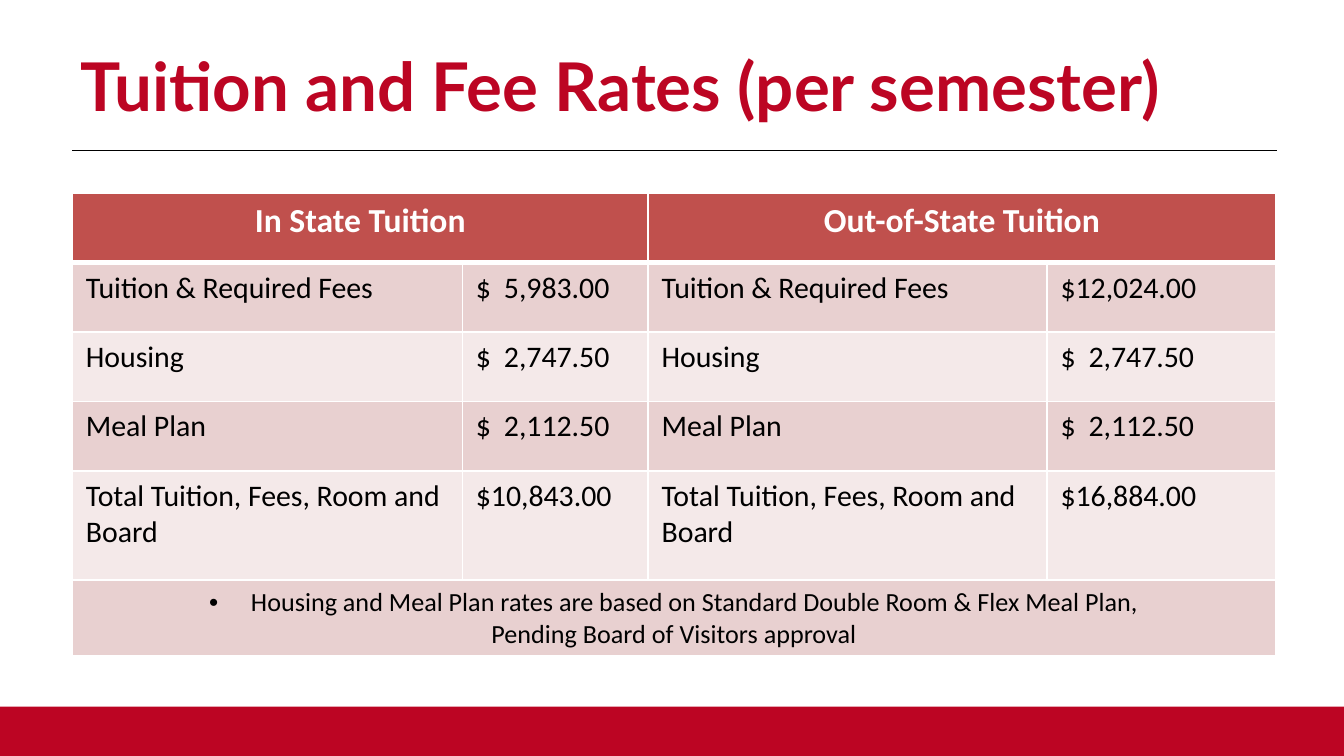
from dataclasses import dataclass

from lxml import etree
from pptx import Presentation
from pptx.dml.color import RGBColor
from pptx.enum.shapes import MSO_CONNECTOR, MSO_SHAPE
from pptx.enum.text import PP_ALIGN
from pptx.oxml.ns import qn
from pptx.util import Cm, Pt

CENTER, LEFT = PP_ALIGN.CENTER, PP_ALIGN.LEFT
RECTANGLE, STRAIGHT = MSO_SHAPE.RECTANGLE, MSO_CONNECTOR.STRAIGHT


@dataclass(frozen=True)
class Theme:
    red: str = "BC0523"
    header: str = "C0504D"
    bands: tuple = ("E8D0D0", "F4E9E9")
    white: str = "FFFFFF"
    black: str = "000000"
    title_size: int = 36
    header_size: int = 18
    body_size: int = 16
    note_size: int = 14


THEME = Theme()
HEADER = {"size": Pt(THEME.header_size), "bold": True, "name": "Calibri"}
BODY = {"size": Pt(THEME.body_size), "bold": False, "name": "Calibri"}
NOTE = BODY | {"size": Pt(THEME.note_size)}
TITLE = {"size": Pt(THEME.title_size), "bold": True, "name": "Lato"}


def write(p, text, fmt, color, align=LEFT):
    p.alignment = align
    r = p.add_run()
    r.text = text
    for key, value in fmt.items():
        setattr(r.font, key, value)
    r.font.color.rgb = RGBColor.from_string(color)


def style_cell(cell, fill, top, bottom):
    tc_pr = cell._tc.get_or_add_tcPr()
    for side, width in (("L", 1), ("R", 1), ("T", top), ("B", bottom)):
        ln = etree.SubElement(tc_pr, qn(f"a:ln{side}"), w=str(Pt(width)))
        solid = etree.SubElement(ln, qn("a:solidFill"))
        etree.SubElement(solid, qn("a:srgbClr"), val=THEME.white)
    cell.fill.solid()
    cell.fill.fore_color.rgb = RGBColor.from_string(fill)


prs = Presentation()
prs.slide_width, prs.slide_height = Cm(25.4), Cm(14.29)
s = prs.slides.add_slide(prs.slide_layouts[6])

# Footer band
sp = s.shapes.add_shape(RECTANGLE, 0, Cm(13.36), prs.slide_width, Cm(0.93))
sp.shadow.inherit = False
sp.fill.solid()
sp.fill.fore_color.rgb = RGBColor.from_string(THEME.red)
sp.line.fill.background()

# Title
tf = s.shapes.add_textbox(Cm(1.27), Cm(0.71), Cm(25.2), Cm(2.39)).text_frame
tf.word_wrap = True
write(tf.paragraphs[0], "Tuition and Fee Rates (per semester)", TITLE, THEME.red)

# Rule under the title
rule = s.shapes.add_connector(STRAIGHT, Cm(1.37), Cm(2.84), Cm(24.13), Cm(2.84))
rule.line.width = Pt(0.75)
rule.line.color.rgb = RGBColor.from_string(THEME.black)
etree.SubElement(rule._element.spPr, qn("a:effectLst"))

# Rate table: item, in-state amount, out-of-state amount
rates = [
    ("Tuition & Required Fees", "$\t5,983.00", "$12,024.00"),
    ("Housing", "$\t2,747.50", "$\t2,747.50"),
    ("Meal Plan", "$\t2,112.50", "$\t2,112.50"),
    ("Total Tuition, Fees, Room and Board", "$10,843.00", "$16,884.00"),
]
col_widths = (7.37, 3.51, 7.54, 4.32)
row_heights = (1.31, 1.31, 1.31, 1.31, 2.06, 1.31)
table = s.shapes.add_table(len(row_heights), len(col_widths), Cm(1.37), Cm(3.66),
                           Cm(sum(col_widths)), Cm(sum(row_heights))).table
for column, width in zip(table.columns, col_widths):
    column.width = Cm(width)
for row, height in zip(table.rows, row_heights):
    row.height = Cm(height)

# Cell fills and borders, with a thick line under the header
for i, row in enumerate(table.rows):
    fill = THEME.bands[(i - 1) % 2] if i else THEME.header
    for cell in row.cells:
        style_cell(cell, fill, top=3 if i == 1 else 1, bottom=1 if i else 3)

# Header
for col, text in ((0, "In State Tuition"), (2, "Out-of-State Tuition")):
    cell = table.cell(0, col)
    cell.merge(table.cell(0, col + 1))
    write(cell.text_frame.paragraphs[0], text, HEADER, THEME.white, CENTER)

# Body rows
for i, (item, in_state, out_of_state) in enumerate(rates, start=1):
    for j, text in enumerate((item, in_state, item, out_of_state)):
        p = table.cell(i, j).text_frame.paragraphs[0]
        if "\t" in text:
            tabs = etree.SubElement(p._p.get_or_add_pPr(), qn("a:tabLst"))
            etree.SubElement(tabs, qn("a:tab"), pos=str(Cm(0.53)), algn="l")
        write(p, text, BODY, THEME.black)

# Note across the last row
last = len(row_heights) - 1
note = table.cell(last, 0)
note.merge(table.cell(last, len(col_widths) - 1))
tf = note.text_frame
p = tf.paragraphs[0]
p_pr = p._p.get_or_add_pPr()
p_pr.set("marL", str(Cm(0.79)))
p_pr.set("indent", str(-Cm(0.79)))
etree.SubElement(p_pr, qn("a:buFont"), typeface="Arial")
etree.SubElement(p_pr, qn("a:buChar"), char="•")
write(p, "Housing and Meal Plan rates are based on Standard Double Room & Flex Meal Plan,",
      NOTE, THEME.black, CENTER)
write(tf.add_paragraph(), "Pending Board of Visitors approval", NOTE, THEME.black, CENTER)

prs.save("out.pptx")
